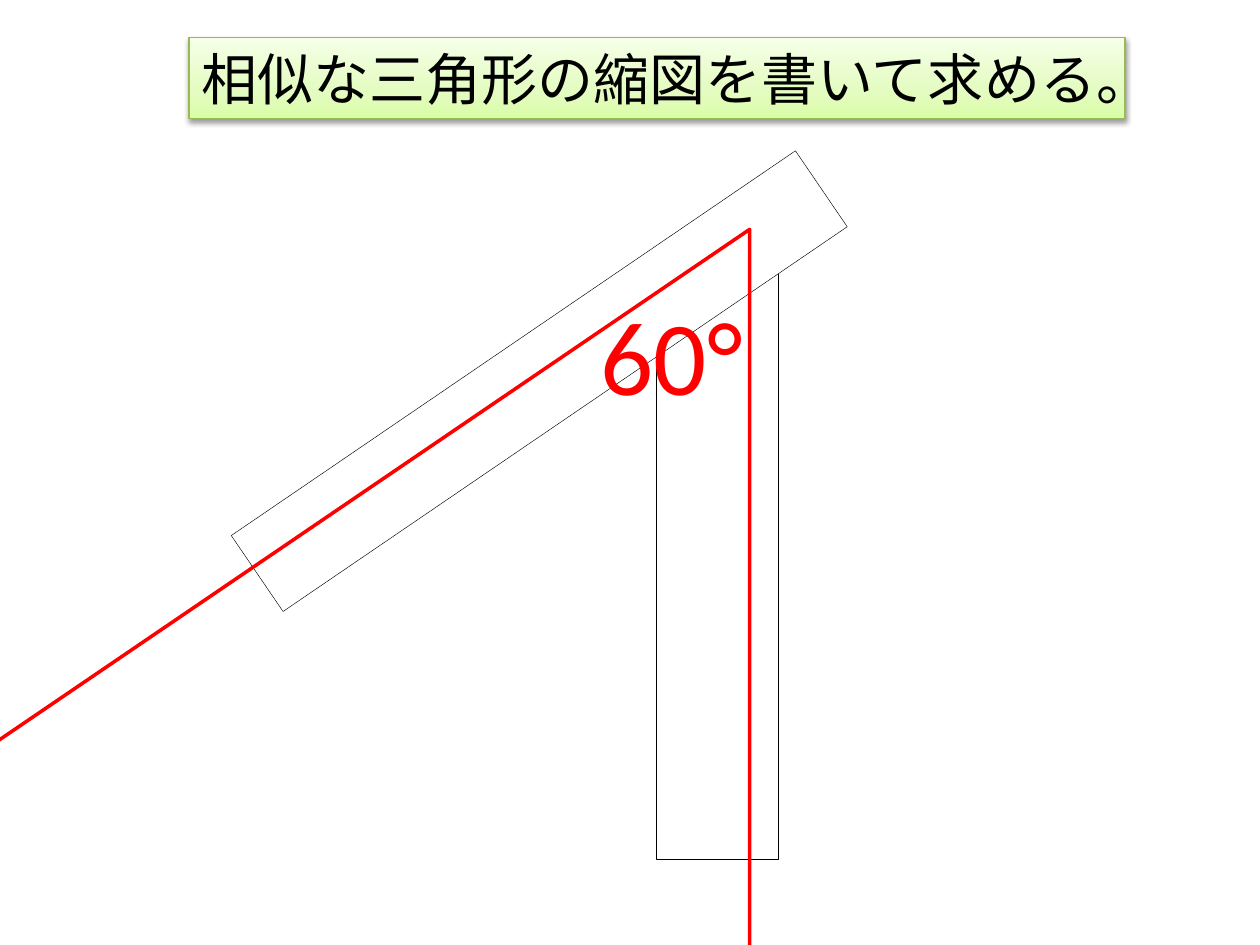
from copy import deepcopy
from dataclasses import dataclass

from lxml.etree import SubElement
from pptx import Presentation
from pptx.dml.color import RGBColor
from pptx.enum.shapes import MSO_SHAPE
from pptx.enum.text import MSO_ANCHOR, MSO_AUTO_SIZE, PP_ALIGN
from pptx.oxml.ns import qn
from pptx.util import Inches, Pt


@dataclass(frozen=True)
class Theme:
    font: str = "Calibri"
    ink: str = "000000"
    paper: str = "FFFFFF"
    accent: str = "FF0000"
    banner_line: str = "98B955"
    banner_stops: tuple = ((0, "DAFDA7"), (0.35, "E4FCC2"), (1, "F5FFE7"))
    banner_size: int = 32
    angle_size: int = 60


class Sketch:
    """Draws on one slide; places are percentages of the slide's size."""

    def __init__(self, deck, theme):
        self.theme = theme
        self.width, self.height = deck.slide_width, deck.slide_height
        self.shapes = deck.slides.add_slide(deck.slide_layouts[6]).shapes

    def place(self, left, top, width, height):
        return (round(left * self.width / 100), round(top * self.height / 100),
                round(width * self.width / 100), round(height * self.height / 100))

    def outline(self, kind, area, color, weight, fill=None, rotation=0):
        shape = self.shapes.add_shape(kind, *self.place(*area))
        shape.shadow.inherit = False
        shape.rotation = rotation
        if fill:
            shape.fill.solid()
            shape.fill.fore_color.rgb = RGBColor.from_string(fill)
        else:
            shape.fill.background()
        shape.line.color.rgb = RGBColor.from_string(color)
        shape.line.width = Pt(weight)
        return shape

    def bar(self, area, rotation=0):
        self.outline(MSO_SHAPE.RECTANGLE, area, self.theme.ink, 0.25,
                     self.theme.paper, rotation)

    def triangle(self, area, apex):
        shape = self.outline(MSO_SHAPE.ISOSCELES_TRIANGLE, area, self.theme.accent, 2)
        shape.adjustments[0] = apex

    def set_text(self, shape, text, size, color):
        frame = shape.text_frame
        frame.word_wrap = False
        frame.auto_size = MSO_AUTO_SIZE.SHAPE_TO_FIT_TEXT
        frame.vertical_anchor = MSO_ANCHOR.TOP
        para = frame.paragraphs[0]
        para.text = text
        para.alignment = PP_ALIGN.LEFT
        para.font.name = self.theme.font
        para.font.size = Pt(size)
        para.font.color.rgb = RGBColor.from_string(color)

    def label(self, area, text):
        box = self.shapes.add_textbox(*self.place(*area))
        self.set_text(box, text, self.theme.angle_size, self.theme.accent)

    def banner(self, area, text):
        shape = self.outline(MSO_SHAPE.RECTANGLE, area, self.theme.banner_line, 0.75)
        self.shade(shape)
        self.drop_shadow(shape)
        self.set_text(shape, text, self.theme.banner_size, self.theme.ink)

    def shade(self, shape):
        shape.fill.gradient()
        shape.fill.gradient_angle = 90
        # A new gradient has two stops; the third is a copy of the last
        stop_list = shape._element.spPr.find(qn("a:gradFill")).find(qn("a:gsLst"))
        stop_list.append(deepcopy(stop_list[-1]))
        for stop, (position, color) in zip(shape.fill.gradient_stops,
                                           self.theme.banner_stops):
            stop.position = position
            stop.color.rgb = RGBColor.from_string(color)

    def drop_shadow(self, shape):
        effects = shape._element.spPr.find(qn("a:effectLst"))
        shadow = SubElement(effects, qn("a:outerShdw"), blurRad=str(Pt(3.1)),
                            dist=str(Pt(1.6)), dir="5400000", rotWithShape="0")
        color = SubElement(shadow, qn("a:srgbClr"), val=self.theme.ink)
        SubElement(color, qn("a:alpha"), val="38000")


def main():
    deck = Presentation()
    deck.slide_width, deck.slide_height = Inches(10), Inches(7.5)
    sketch = Sketch(deck, Theme())

    # Upright post and slanted beam
    sketch.bar((52.1, 26.93, 9.7, 64))
    sketch.bar((15.7, 35.47, 54.2, 9.73), rotation=325.7)

    # Angle between them, with the apex at the right
    sketch.triangle((-25.6, 24.27, 85.1, 77.2), apex=1)
    sketch.label((46.7, 30.13, 19, 14.8), "60°")

    # Heading
    sketch.banner((15, 4, 74.3, 8.53), "相似な三角形の縮図を書いて求める。")

    deck.save("out.pptx")


if __name__ == "__main__":
    main()
